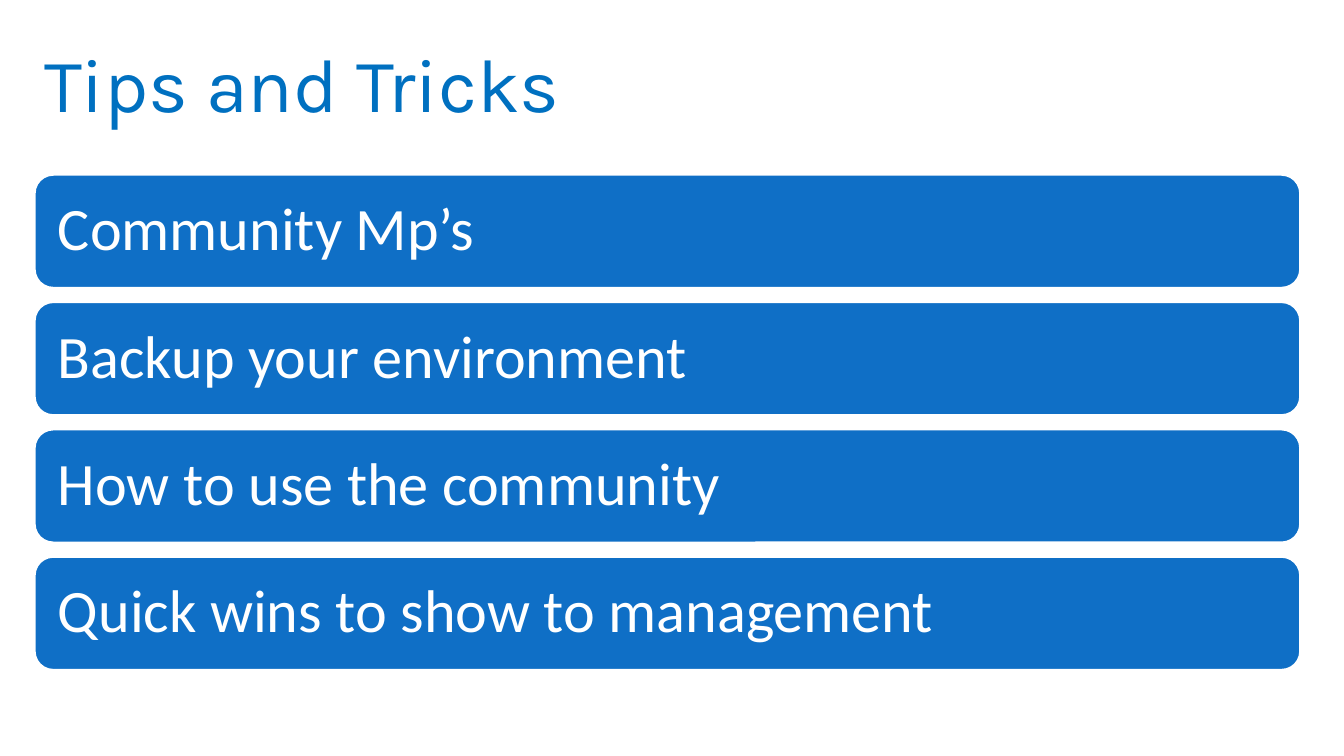
from pptx import Presentation
from pptx import util as u
from pptx.dml.color import RGBColor
from pptx.enum import shapes, text

PX = 9144  # EMU per px, 100 px to the inch

WHITE = RGBColor(0xFF, 0xFF, 0xFF)
TITLE_BLUE = RGBColor(0x00, 0x70, 0xC0)
BAR_BLUE = RGBColor(0x0F, 0x6F, 0xC6)

TIPS = [
    "Community Mp’s",
    "Backup your environment",
    "How to use the community",
    "Quick wins to show to management",
]
BAR_HEIGHT = 113


def px(n):
    return u.Emu(round(n * PX))


def write(sp, words, font, size, color, line_spacing, inset_x, inset_y):
    """Put one left-aligned, vertically centred line into a shape."""
    tf = sp.text_frame
    tf.word_wrap = True
    tf.vertical_anchor = text.MSO_ANCHOR.MIDDLE
    tf.margin_left = tf.margin_right = px(inset_x)
    tf.margin_top = tf.margin_bottom = px(inset_y)
    p = tf.paragraphs[0]
    p.alignment = text.PP_ALIGN.LEFT
    p.line_spacing = line_spacing
    r = p.add_run()
    r.text = words
    r.font.name = font
    r.font.size = u.Pt(size)
    r.font.color.rgb = color


def add_title(s, words, x, y, w, h):
    sp = s.shapes.add_textbox(px(x), px(y), px(w), px(h))
    write(sp, words, "Karla", 54, TITLE_BLUE, 0.8, 10, 5)


def add_bars(s, items, x, y, w, h):
    """Stack equal rounded bars that fill the height of the box."""
    step = (h - BAR_HEIGHT) / (len(items) - 1)
    for i, words in enumerate(items):
        sp = s.shapes.add_shape(shapes.MSO_SHAPE.ROUNDED_RECTANGLE,
                                px(x), px(y + i * step), px(w), px(BAR_HEIGHT))
        sp.shadow.inherit = False
        sp.fill.solid()
        sp.fill.fore_color.rgb = BAR_BLUE
        sp.line.color.rgb = WHITE
        sp.line.width = u.Pt(2)
        write(sp, words, "Calibri", 43, WHITE, 0.9, 18, 18)


def main():
    prs = Presentation()
    prs.slide_width, prs.slide_height = px(1333), px(750)
    s = prs.slides.add_slide(prs.slide_layouts[6])

    # Background
    s.background.fill.solid()
    s.background.fill.fore_color.rgb = WHITE

    # Title and list of tips
    add_title(s, "Tips and Tricks", 34, 28, 1200, 125)
    add_bars(s, TIPS, 34, 173, 1256, 492)

    prs.save("out.pptx")


if __name__ == "__main__":
    main()
